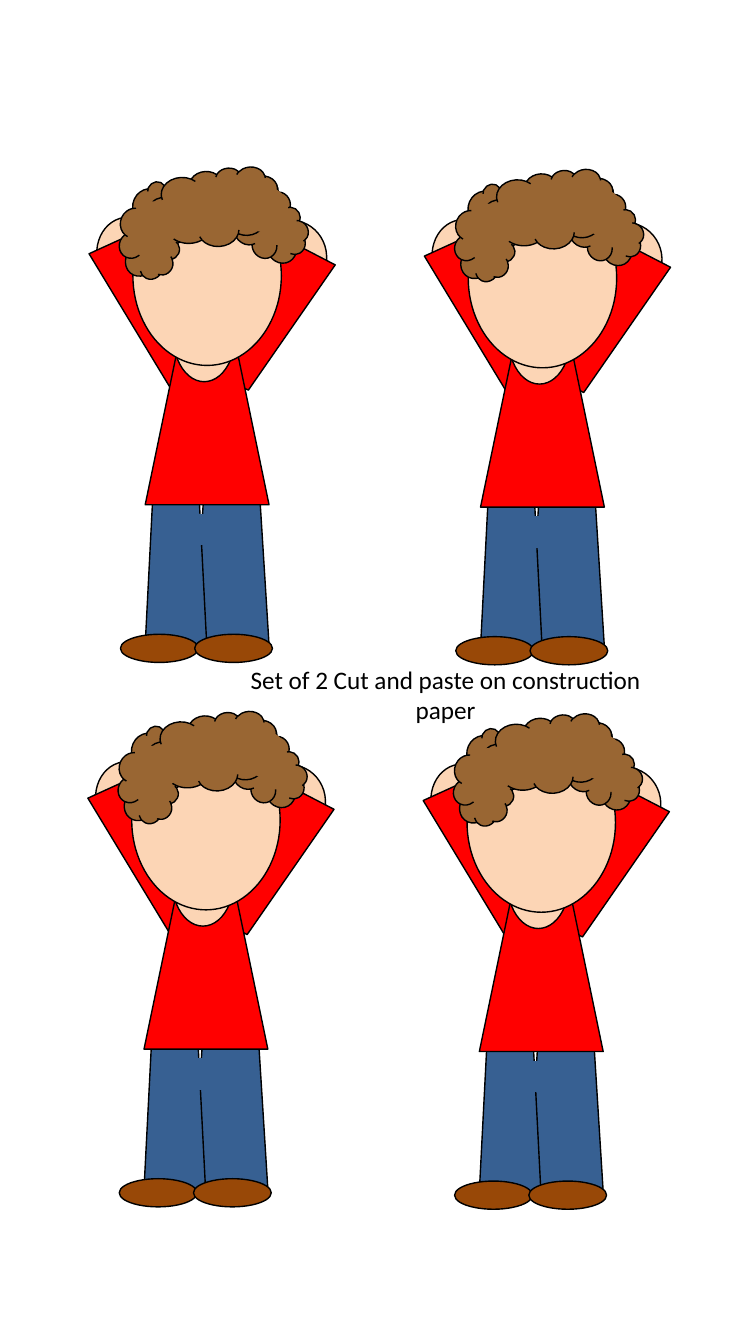
from dataclasses import dataclass

from pptx import Presentation
from pptx.dml.color import RGBColor
from pptx.enum.shapes import MSO_SHAPE
from pptx.enum.text import MSO_AUTO_SIZE, PP_ALIGN
from pptx.util import Cm, Pt


@dataclass(frozen=True)
class Theme:
    skin: str = "FCD5B5"
    shirt: str = "FF0000"
    jeans: str = "376092"
    shoe: str = "984807"
    hair: str = "996633"
    ink: str = "000000"
    font: str = "Calibri"
    caption_size: int = 18
    outline: int = 1


THEME = Theme()


@dataclass(frozen=True)
class Part:
    kind: MSO_SHAPE
    box: tuple
    fill: str
    rotation: float = 0
    line: str = THEME.ink
    taper: float = 0.25


TRAPEZOID, OVAL, CLOUD = MSO_SHAPE.TRAPEZOID, MSO_SHAPE.OVAL, MSO_SHAPE.CLOUD

LEGS = [
    Part(TRAPEZOID, (2.46, 8.23, 1.88, 3.76), THEME.jeans, taper=0.125),
    Part(TRAPEZOID, (1.22, 8.23, 1.55, 3.76), THEME.jeans, taper=0.125),
]
ARMS = [
    Part(OVAL, (0, 1.22, 1.65, 1.91), THEME.skin, 171),
    Part(TRAPEZOID, (0.58, 1.55, 1.96, 4.17), THEME.shirt, 155.5),
    Part(OVAL, (3.96, 1.3, 1.83, 1.91), THEME.skin, 191.9),
    Part(TRAPEZOID, (3.28, 1.76, 1.96, 3.81), THEME.shirt, 207.4),
]
SHIRT = Part(TRAPEZOID, (1.22, 4.71, 3.12, 3.76), THEME.shirt)
NECK = Part(OVAL, (1.93, 3.11, 1.55, 2.26), THEME.skin)
FACE = Part(OVAL, (0.91, 0.44, 3.74, 4.52), THEME.skin)
JEANS_SEAT = Part(MSO_SHAPE.RECTANGLE, (2.16, 8.72, 0.94, 0.76), THEME.jeans, line=THEME.jeans)
SHOES = [Part(OVAL, (x, 11.11, 0.71, 1.96), THEME.shoe, 90) for x in (1.22, 3.09)]
CURLS = [
    Part(CLOUD, (3, 0.44, 2.46, 1.68), THEME.hair, 60.5),
    Part(CLOUD, (0.18, 0.71, 2.46, 1.68), THEME.hair, 114.2),
    Part(CLOUD, (1.35, 0, 3.3, 1.96), THEME.hair, 357),
    Part(OVAL, (3.63, 0.46, 1.17, 1.12), THEME.hair, line=THEME.hair),
    Part(OVAL, (0.89, 0.84, 1.17, 1.12), THEME.hair, line=THEME.hair),
]
BOY_PARTS = [*LEGS, *ARMS, SHIRT, NECK, FACE, JEANS_SEAT, *SHOES, *CURLS]


def add_part(shapes, part, left, top):
    x, y, width, height = part.box
    shape = shapes.add_shape(part.kind, Cm(left + x), Cm(top + y), Cm(width), Cm(height))
    shape.rotation = part.rotation
    shape.shadow.inherit = False
    shape.fill.solid()
    shape.fill.fore_color.rgb = RGBColor.from_string(part.fill)
    shape.line.color.rgb = RGBColor.from_string(part.line)
    shape.line.width = Pt(THEME.outline)
    if part.kind == TRAPEZOID:
        shape.adjustments[0] = part.taper


def add_boy(slide, column, row):
    left = 2.44 + 8.45 * column - 0.03 * row
    top = 4.25 + 13.72 * row + 0.06 * column
    group = slide.shapes.add_group_shape()
    for part in BOY_PARTS:
        add_part(group.shapes, part, left, top)


def add_caption(slide, text):
    shape = slide.shapes.add_textbox(Cm(5.72), Cm(16.62), Cm(11.02), Cm(1.8))
    frame = shape.text_frame
    frame.word_wrap = True
    frame.auto_size = MSO_AUTO_SIZE.SHAPE_TO_FIT_TEXT
    paragraph = frame.paragraphs[0]
    paragraph.alignment = PP_ALIGN.CENTER
    run = paragraph.add_run()
    run.text = text
    run.font.name = THEME.font
    run.font.size = Pt(THEME.caption_size)
    run.font.color.rgb = RGBColor.from_string(THEME.ink)


def main():
    presentation = Presentation()
    presentation.slide_width = Cm(19.05)
    presentation.slide_height = Cm(33.87)
    slide = presentation.slides.add_slide(presentation.slide_layouts.get_by_name("Blank"))
    for row in (1, 0):
        add_boy(slide, 0, row)
    add_caption(slide, "Set of 2 Cut and paste on construction paper")
    for row in (1, 0):
        add_boy(slide, 1, row)
    presentation.save("out.pptx")


if __name__ == "__main__":
    main()
